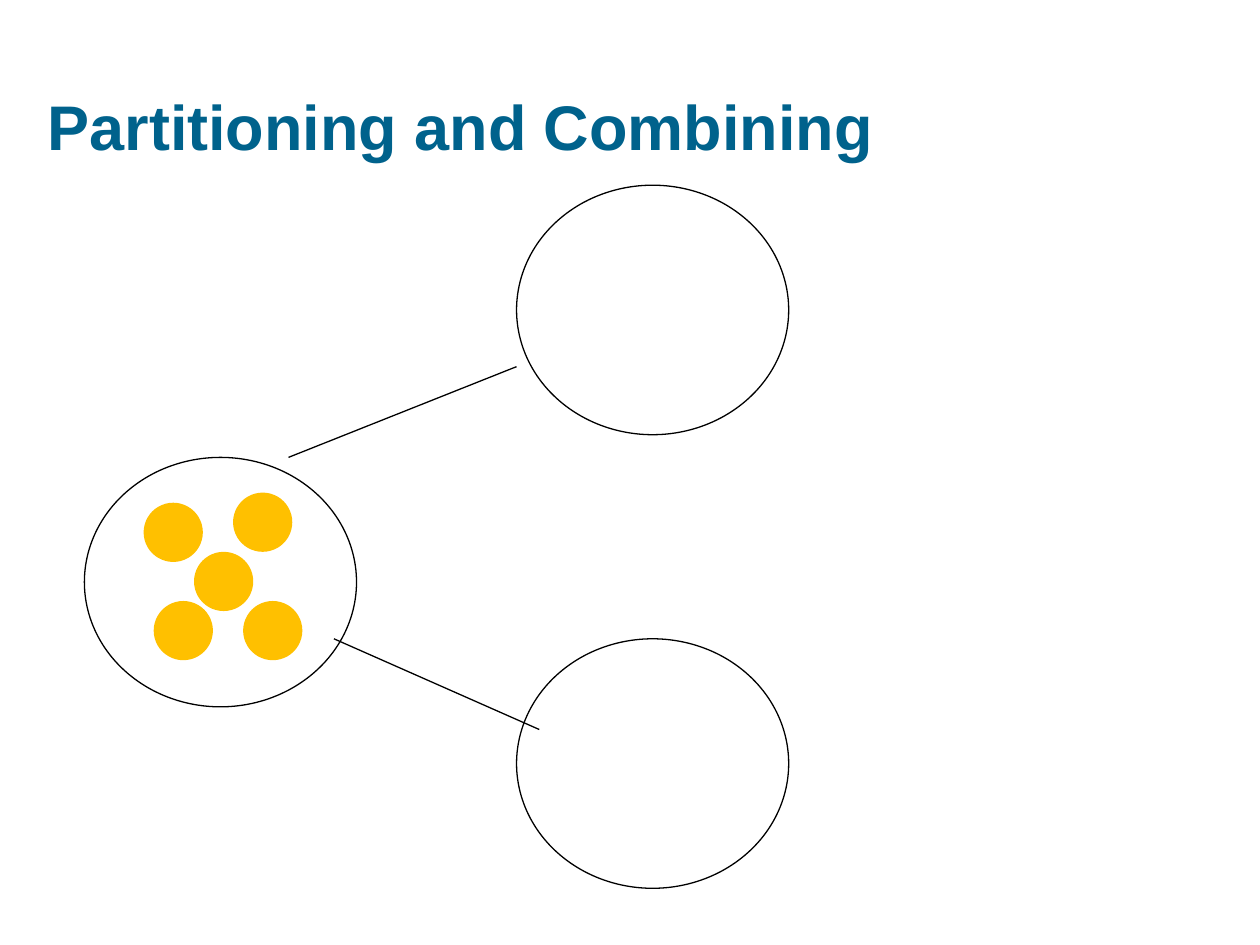
from dataclasses import dataclass

from lxml import etree
from pptx import Presentation
from pptx import util as u
from pptx.dml.color import RGBColor
from pptx.enum import shapes, text
from pptx.oxml import ns
from pptx.slide import Slide


def colour(code):
    """Turn a hex string into a colour."""
    return RGBColor.from_string(code)


@dataclass
class Canvas:
    """Hold the style and the slide being drawn."""
    slide: Slide
    font: str = "Arial"
    title_colour: str = "00628C"
    line_colour: str = "000000"
    counter_colour: str = "FFC000"
    line_width: float = 0.75

    def title(self, words, left, top, width, height):
        """Add the bold heading."""
        box = self.slide.shapes.add_textbox(*map(u.Inches, (left, top, width, height)))
        frame = box.text_frame
        frame.word_wrap = True
        frame.vertical_anchor = text.MSO_ANCHOR.BOTTOM
        para = frame.paragraphs[0]
        para.text = words
        para.font.name = self.font
        para.font.size = u.Pt(36)
        para.font.bold = True
        para.font.color.rgb = colour(self.title_colour)

    def ellipse(self, left, top, width, height):
        """Add an ellipse without a shadow."""
        oval = self.slide.shapes.add_shape(
            shapes.MSO_SHAPE.OVAL, *map(u.Inches, (left, top, width, height)))
        oval.shadow.inherit = False
        return oval

    def group_ring(self, left, top):
        """Add an outlined ring for one group."""
        ring = self.ellipse(left, top, 2.16, 1.98)
        ring.fill.background()
        self.outline(ring.line)

    def counter(self, left, top):
        """Add a filled counter."""
        disc = self.ellipse(left, top, 0.47, 0.47)
        disc.fill.solid()
        disc.fill.fore_color.rgb = colour(self.counter_colour)
        disc.line.fill.background()

    def link(self, *ends):
        """Add a straight line between two points."""
        line = self.slide.shapes.add_connector(
            shapes.MSO_CONNECTOR.STRAIGHT, *map(u.Inches, ends))
        self.outline(line.line)
        etree.SubElement(line._element.spPr, ns.qn("a:effectLst"))

    def outline(self, line):
        """Apply the thin outline style."""
        line.color.rgb = colour(self.line_colour)
        line.width = u.Pt(self.line_width)


def main():
    """Build the partitioning slide."""
    deck = Presentation()
    deck.slide_width, deck.slide_height = u.Inches(10), u.Inches(7.5)
    page = Canvas(deck.slides.add_slide(deck.slide_layouts[6]))
    page.title("Partitioning and Combining", 0.28, 0.36, 8.67, 0.98)
    for left, top in ((4.1, 5.07), (4.1, 1.47), (0.67, 3.63)):
        page.group_ring(left, top)
    page.link(4.28, 5.79, 2.65, 5.07)
    page.link(4.1, 2.91, 2.29, 3.63)
    for left, top in ((1.14, 3.99), (1.85, 3.91), (1.22, 4.77), (1.54, 4.38), (1.93, 4.77)):
        page.counter(left, top)
    deck.save("out.pptx")


if __name__ == "__main__":
    main()
